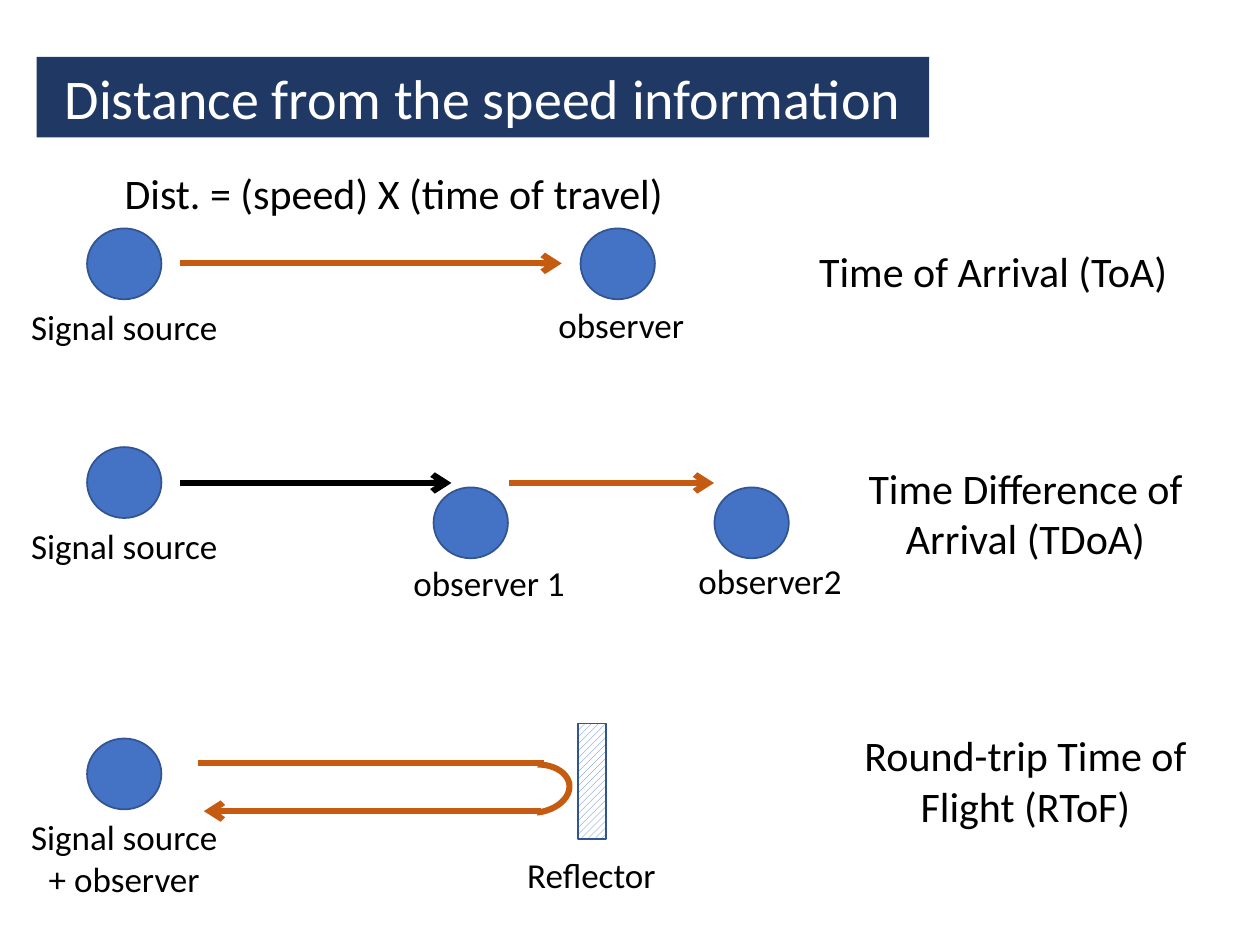
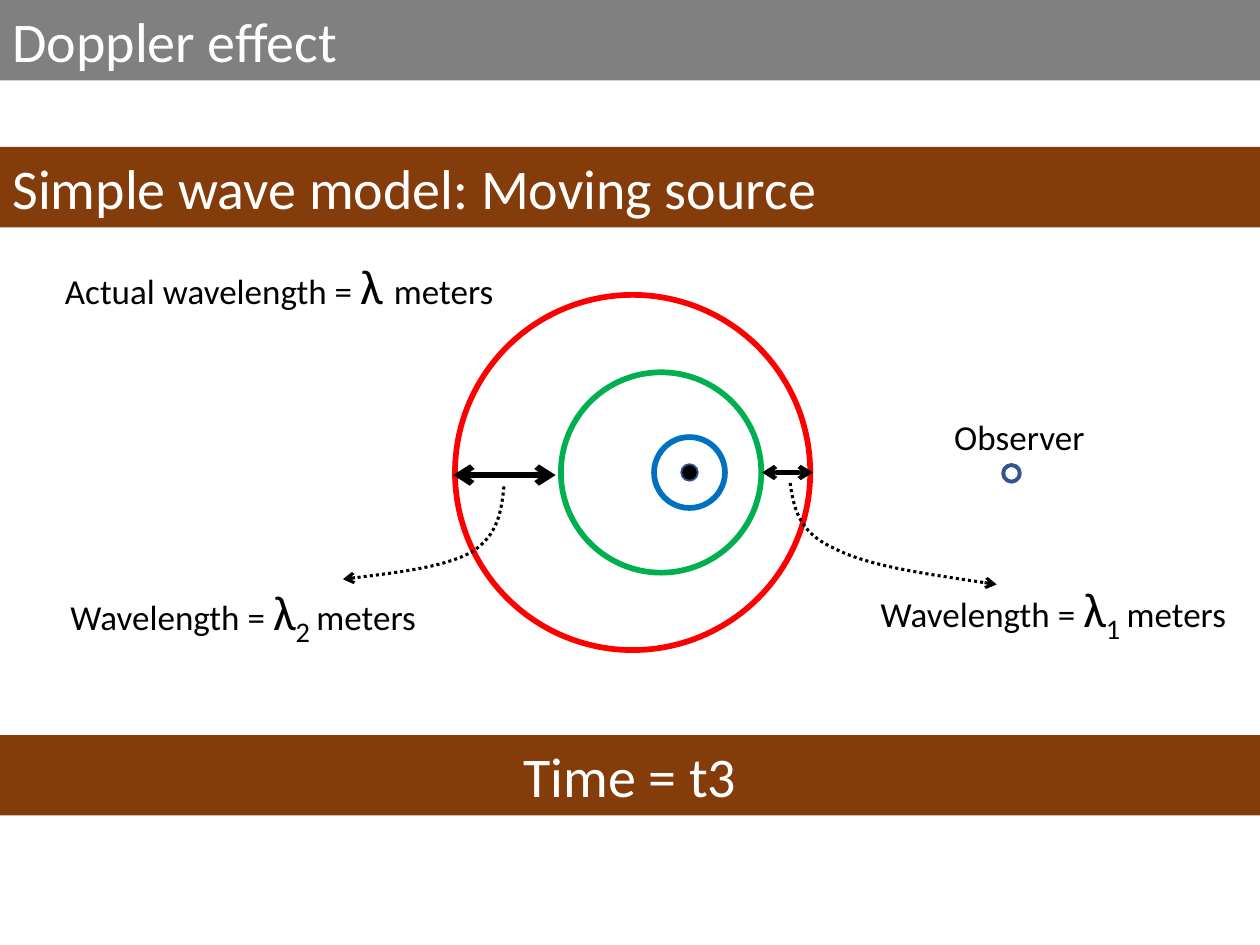
from lxml.etree import SubElement
from pptx import Presentation
from pptx.dml.color import RGBColor
from pptx.enum.dml import MSO_LINE, MSO_PATTERN
from pptx.enum.shapes import MSO_CONNECTOR, MSO_SHAPE
from pptx.enum.text import MSO_ANCHOR, MSO_AUTO_SIZE, PP_ALIGN
from pptx.oxml.ns import qn
from pptx.util import Pt

BLACK = RGBColor(0x00, 0x00, 0x00)
WHITE = RGBColor(0xFF, 0xFF, 0xFF)
BLUE = RGBColor(0x44, 0x72, 0xC4)
OUTLINE = RGBColor(0x32, 0x54, 0x91)
ORANGE = RGBColor(0xC5, 0x5A, 0x11)
NAVY = RGBColor(0x20, 0x38, 0x64)
GRAY = RGBColor(0x80, 0x80, 0x80)
BROWN = RGBColor(0x84, 0x3C, 0x0B)
WAVE_BLUE = RGBColor(0x00, 0x70, 0xC0)
WAVE_GREEN = RGBColor(0x00, 0xB0, 0x50)
WAVE_RED = RGBColor(0xFF, 0x00, 0x00)

SLIDE_WIDTH = 720
BAND_HEIGHT = 46
NODE_WIDTH, NODE_HEIGHT = 42.5, 40.5


class Deck:
    """Holds the shared style and the slide being drawn."""

    font_name = "Calibri"

    def __init__(self):
        """Start an empty 10 by 7.5 inch presentation."""
        self.presentation = Presentation()
        self.presentation.slide_width = Pt(SLIDE_WIDTH)
        self.presentation.slide_height = Pt(540)
        self.slide = None

    def add_slide(self):
        """Make a new blank slide the current one."""
        self.slide = self.presentation.slides.add_slide(self.presentation.slide_layouts[6])

    def style_paragraph(self, paragraph, size, color, alignment):
        """Apply the deck font to a paragraph."""
        paragraph.alignment = alignment
        paragraph.font.name = self.font_name
        paragraph.font.size = Pt(size)
        paragraph.font.color.rgb = color

    def shape(self, kind, left, top, width, height, fill=None, line=None, weight=1):
        """Draw a preset shape with an optional fill and outline."""
        shape = self.slide.shapes.add_shape(kind, Pt(left), Pt(top), Pt(width), Pt(height))
        shape.shadow.inherit = False
        if fill is None:
            shape.fill.background()
        else:
            shape.fill.solid()
            shape.fill.fore_color.rgb = fill
        if line is None:
            shape.line.fill.background()
        else:
            shape.line.color.rgb = line
            shape.line.width = Pt(weight)
        return shape

    def node(self, center, top):
        """Draw a signal source or observer."""
        self.shape(MSO_SHAPE.OVAL, center - NODE_WIDTH / 2, top, NODE_WIDTH, NODE_HEIGHT, BLUE, OUTLINE)

    def circle(self, x, y, diameter, fill, line, weight):
        """Draw a circle around a centre point."""
        self.shape(MSO_SHAPE.OVAL, x - diameter / 2, y - diameter / 2, diameter, diameter, fill, line, weight)

    def band(self, text, top, fill, left=0, width=SLIDE_WIDTH, alignment=PP_ALIGN.LEFT):
        """Draw a coloured heading band."""
        shape = self.shape(MSO_SHAPE.RECTANGLE, left, top, width, BAND_HEIGHT, fill)
        shape.text_frame.text = text
        shape.text_frame.vertical_anchor = MSO_ANCHOR.MIDDLE
        self.style_paragraph(shape.text_frame.paragraphs[0], 32, WHITE, alignment)

    def text_box(self, center, top, width, height):
        """Add a wrapping text box around a horizontal centre."""
        box = self.slide.shapes.add_textbox(Pt(center - width / 2), Pt(top), Pt(width), Pt(height))
        box.text_frame.word_wrap = True
        box.text_frame.auto_size = MSO_AUTO_SIZE.SHAPE_TO_FIT_TEXT
        return box.text_frame

    def label(self, text, center, top, width=140, height=31.5, size=20):
        """Write centred text."""
        frame = self.text_box(center, top, width, height)
        frame.text = text
        for paragraph in frame.paragraphs:
            self.style_paragraph(paragraph, size, BLACK, PP_ALIGN.CENTER)

    def wavelength(self, prefix, subscript, center, top, width):
        """Write a wavelength with a large lambda and an optional subscript."""
        paragraph = self.text_box(center, top, width, 41).paragraphs[0]
        self.style_paragraph(paragraph, 20, BLACK, PP_ALIGN.CENTER)
        symbols = [("λ", 28, 0), (f"{subscript} ", 28, -25000)] if subscript else [("λ ", 28, 0)]
        for text, size, baseline in [(prefix, 20, 0), *symbols, ("meters", 20, 0)]:
            run = paragraph.add_run()
            run.text = text
            run.font.size = Pt(size)
            if baseline:
                run._r.get_or_add_rPr().set("baseline", str(baseline))

    def add_arrowheads(self, shape, ends):
        """Put open arrowheads on the named line ends."""
        outline = shape.element.spPr.find(qn("a:ln"))
        for end in ends:
            SubElement(outline, qn(f"a:{end}")).set("type", "arrow")

    def line(self, start, end, color, weight=3.5, ends=("tailEnd",)):
        """Draw a straight line with optional arrowheads."""
        connector = self.slide.shapes.add_connector(MSO_CONNECTOR.STRAIGHT, *map(Pt, (*start, *end)))
        connector.line.color.rgb = color
        connector.line.width = Pt(weight)
        self.add_arrowheads(connector, ends)
        SubElement(connector.element.spPr, qn("a:effectLst"))

    def dotted_curve(self, points):
        """Draw a dotted arrow through cubic Bézier points."""
        start, *controls = [(Pt(x), Pt(y)) for x, y in points]
        builder = self.slide.shapes.build_freeform(*start)
        builder.add_line_segments(controls, close=False)
        shape = builder.convert_to_shape()
        shape.shadow.inherit = False
        shape.fill.background()
        shape.line.color.rgb = BLACK
        shape.line.width = Pt(1.75)
        shape.line.dash_style = MSO_LINE.ROUND_DOT
        self.add_arrowheads(shape, ["tailEnd"])
        outline = shape.element.find(f".//{qn('a:path')}")
        segments = outline.findall(qn("a:lnTo"))
        for index, segment in enumerate(segments):
            if index % 3 == 0:
                curve = SubElement(outline, qn("a:cubicBezTo"))
            curve.append(segment[0])
            outline.remove(segment)


def build_distance_slide(deck):
    """Compare three ways to measure distance from travel time."""
    deck.add_slide()
    deck.band("Distance from the speed information", 32.5, NAVY, 21, 510, PP_ALIGN.CENTER)
    deck.label("Dist. = (speed) X (time of travel)", 225, 92, 350, 36, 24)

    source_center = 71
    for top, text in [(130.5, "Signal source"), (255.5, "Signal source"), (422, "Signal source\n+ observer")]:
        deck.node(source_center, top)
        deck.label(text, source_center, top + NODE_HEIGHT, height=31.5 + 24 * text.count("\n"))

    for center, top, text, label_center, label_top in [
        (353, 130.5, "observer", 355, 170),
        (269, 278.5, "observer 1", 279.5, 317.5),
        (429.5, 278.5, "observer2", 440, 316),
    ]:
        deck.node(center, top)
        deck.label(text, label_center, label_top)

    for text, center, top, height in [
        ("Time of Arrival (ToA)", 567.5, 137, 36),
        ("Time Difference of Arrival (TDoA)", 586, 260.5, 65.5),
        ("Round-trip Time of Flight (RToF)", 586, 413.5, 65.5),
    ]:
        deck.label(text, center, top, 248, height, 24)

    deck.line((103, 150.5), (321, 150.5), ORANGE)
    deck.line((103, 276), (258, 276), BLACK)
    deck.line((291, 276), (408, 276), ORANGE)
    deck.line((113, 436), (311, 436), ORANGE, ends=())
    deck.line((309, 463.5), (116.5, 463.5), ORANGE)

    turn = deck.shape(MSO_SHAPE.ARC, 291.5, 430.5, 27.5, 40.5, line=ORANGE, weight=3.5)
    turn.adjustments[0] = 116.81
    turn.adjustments[1] = 0
    turn.rotation = 83.4

    reflector = deck.shape(MSO_SHAPE.RECTANGLE, 330.5, 413.5, 16, 66, line=OUTLINE)
    reflector.fill.patterned()
    reflector.fill.pattern = MSO_PATTERN.WIDE_UPWARD_DIAGONAL
    reflector.fill.fore_color.rgb = BLUE
    reflector.fill.back_color.rgb = WHITE
    deck.label("Reflector", 338, 484)


def build_doppler_slide(deck):
    """Show waves from a moving source."""
    deck.add_slide()
    deck.band("Doppler effect", 0, GRAY)
    deck.band("Simple wave model: Moving source", 84, BROWN)
    deck.band("Time = t3", 420, BROWN, alignment=PP_ALIGN.CENTER)

    source_x, axis_y, source_step = 394, 270, 16.25
    waves = [(40.5, WAVE_BLUE), (114.5, WAVE_GREEN), (203, WAVE_RED)]
    for age, (diameter, color) in enumerate(waves):
        deck.circle(source_x - age * source_step, axis_y, diameter, None, color, 3.25)
    deck.circle(source_x, axis_y, 9.5, BLACK, OUTLINE, 1)
    deck.circle(578, axis_y + 0.5, 9.5, WHITE, OUTLINE, 2.25)
    deck.label("Observer", 582.5, 234)

    both_ends = ("headEnd", "tailEnd")
    deck.line((464.5, axis_y), (435.5, axis_y), BLACK, 2.5, both_ends)
    deck.line((317.5, 271.5), (259, 271.5), BLACK, 3.5, both_ends)
    deck.dotted_curve([(451.5, 276), (453.5, 289.5), (456, 304), (476, 313),
                       (495.5, 323.5), (533, 328.5), (569.5, 334)])
    deck.dotted_curve([(288, 278), (286.5, 292.5), (284.5, 306), (269.5, 315.5),
                       (254, 324), (224.5, 327.5), (196, 331)])

    deck.wavelength("Actual wavelength = ", "", 159.5, 142.5, 290)
    deck.wavelength("Wavelength = ", "1", 602, 327, 236)
    deck.wavelength("Wavelength = ", "2", 139, 328.5, 236)


def main():
    """Build and save the deck."""
    deck = Deck()
    build_distance_slide(deck)
    build_doppler_slide(deck)
    deck.presentation.save("out.pptx")


if __name__ == "__main__":
    main()
